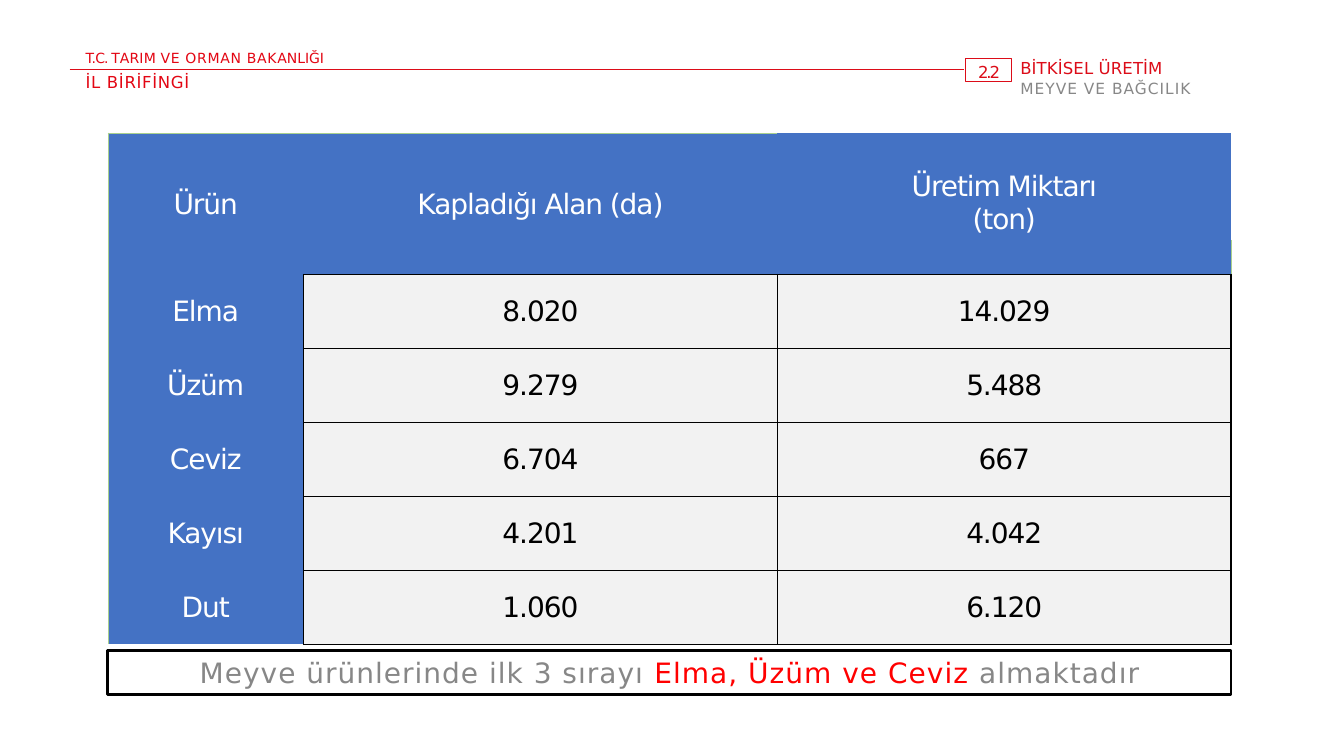
from lxml import etree
from pptx import Presentation
from pptx import util as u
from pptx.dml.color import RGBColor
from pptx.enum import shapes, text
from pptx.oxml import ns

COLORS = {
    "red": "E30613", "dark_red": "DC0C18", "accent": "FF0000",
    "grey": "878787", "blue": "4472C4", "light": "F2F2F2",
    "green": "A9D08E", "black": "000000", "white": "FFFFFF",
}
PRODUCTS = [
    ("Elma", "8.020", "14.029"),
    ("Üzüm", "9.279", "5.488"),
    ("Ceviz", "6.704", "667"),
    ("Kayısı", "4.201", "4.042"),
    ("Dut", "1.060", "6.120"),
]
COLUMN_WIDTHS = (1.94, 4.7, 4.5)
HEADER_HEIGHTS = (1.06, 0.34)
BODY_HEIGHT = 3.67 / len(PRODUCTS)
BLACK, GREEN = ("black", 1), ("green", 0.5)


def rgb(name):
    return RGBColor.from_string(COLORS[name])


class SlideBuilder:
    font = "DejaVu Sans"

    def __init__(self, presentation):
        self.slide = presentation.slides.add_slide(presentation.slide_layouts[6])

    def fill_paragraph(self, paragraph, runs, size, color, align=None):
        """Each run is (text, letter spacing) or (text, letter spacing, colour)."""
        if align is not None:
            paragraph.alignment = align
        paragraph.font.name = self.font
        paragraph.font.size = u.Pt(size)
        paragraph.font.color.rgb = rgb(color)
        for words, spacing, *run_color in runs:
            run = paragraph.add_run()
            run.text = words
            run._r.get_or_add_rPr().set("spc", str(round(spacing * 100)))
            if run_color:
                run.font.color.rgb = rgb(run_color[0])

    def text(self, left, top, width, height, lines):
        """Each line is (runs, size, colour)."""
        box = self.slide.shapes.add_textbox(*map(u.Inches, (left, top, width, height)))
        frame = box.text_frame
        frame.word_wrap = True
        frame.margin_left = frame.margin_right = frame.margin_bottom = 0
        frame.margin_top = u.Inches(0.02)
        for index, line in enumerate(lines):
            paragraph = frame.add_paragraph() if index else frame.paragraphs[0]
            if index:
                paragraph.space_before = u.Pt(0.8)
            self.fill_paragraph(paragraph, *line)

    def frame(self, left, top, width, height, color, weight):
        shape = self.slide.shapes.add_shape(
            shapes.MSO_SHAPE.RECTANGLE, *map(u.Inches, (left, top, width, height)))
        shape.shadow.inherit = False
        shape.fill.background()
        shape.line.color.rgb = rgb(color)
        shape.line.width = u.Pt(weight)
        shape.text_frame.word_wrap = True
        return shape.text_frame

    def rule(self, left, right, y, color, weight):
        line = self.slide.shapes.add_connector(
            shapes.MSO_CONNECTOR.STRAIGHT, *map(u.Inches, (left, y, right, y)))
        line.line.color.rgb = rgb(color)
        line.line.width = u.Pt(weight)
        etree.SubElement(line._element.spPr, ns.qn("a:effectLst"))

    def table(self, left, top, widths, heights):
        table = self.slide.shapes.add_table(
            len(heights), len(widths),
            *map(u.Inches, (left, top, sum(widths), sum(heights)))).table
        for column, width in zip(table.columns, widths):
            column.width = u.Inches(width)
        for row, height in zip(table.rows, heights):
            row.height = u.Inches(height)
        return table

    def cell(self, cell, lines, fill, color, borders, top=0.01):
        """borders maps L, R, T, B to (colour, points); other sides stay bare."""
        properties = cell._tc.get_or_add_tcPr()
        for side in "LRTB":
            line = etree.SubElement(properties, ns.qn("a:ln" + side))
            if side in borders:
                name, weight = borders[side]
                line.set("w", str(u.Pt(weight)))
                solid = etree.SubElement(line, ns.qn("a:solidFill"))
                etree.SubElement(solid, ns.qn("a:srgbClr")).set("val", COLORS[name])
            else:
                etree.SubElement(line, ns.qn("a:noFill"))
        cell.fill.solid()
        cell.fill.fore_color.rgb = rgb(fill)
        cell.margin_left = cell.margin_right = u.Inches(0.01)
        cell.margin_top, cell.margin_bottom = u.Inches(top), 0
        cell.vertical_anchor = text.MSO_ANCHOR.MIDDLE
        for index, words in enumerate(lines):
            frame = cell.text_frame
            paragraph = frame.add_paragraph() if index else frame.paragraphs[0]
            self.fill_paragraph(paragraph, [(words, -0.8)], 20, color,
                                text.PP_ALIGN.CENTER)


def main():
    presentation = Presentation()
    presentation.slide_width = u.Inches(13.33)
    presentation.slide_height = u.Inches(7.5)
    builder = SlideBuilder(presentation)

    # Summary below the table
    summary = builder.frame(1.07, 6.45, 11.14, 0.44, "black", 2)
    summary.vertical_anchor = text.MSO_ANCHOR.MIDDLE
    builder.fill_paragraph(summary.paragraphs[0], [
        ("Meyve ürünlerinde ilk 3 sırayı ", 0.7),
        ("Elma, Üzüm ve Ceviz ", 0.7, "accent"),
        ("almaktadır", 0.7),
    ], 20, "grey", text.PP_ALIGN.CENTER)

    # Page header
    builder.text(0.85, 0.47, 2.45, 0.18, [
        ([("T.C. T", -0.6), ("ARIM ", 0.1), ("VE ORMAN BAK", 0.5), ("ANLIĞI", 0)],
         10, "red")])
    builder.text(0.85, 0.69, 2.54, 0.21, [([("İL BİRİFİNGİ", 0.5)], 11.8, "red")])
    builder.rule(0.69, 9.56, 0.69, "dark_red", 0.82)
    builder.text(10.12, 0.56, 3.06, 0.41, [
        ([("BİTKİSEL ÜRETİM", 0.1)], 11.8, "dark_red"),
        ([("MEYVE VE BAĞCILIK", 0.7)], 11, "grey")])

    # Section number
    number = builder.frame(9.58, 0.58, 0.45, 0.23, "dark_red", 0.82)
    number.vertical_anchor = text.MSO_ANCHOR.TOP
    number.margin_left, number.margin_top = u.Inches(0.12), u.Inches(0.04)
    number.margin_right = number.margin_bottom = 0
    builder.fill_paragraph(number.paragraphs[0], [("2 . 2", -2.6)], 11.8,
                           "dark_red", text.PP_ALIGN.LEFT)

    # Table heading over two rows
    table = builder.table(1.07, 1.32, COLUMN_WIDTHS,
                          [*HEADER_HEIGHTS, *[BODY_HEIGHT] * len(PRODUCTS)])
    for column in (0, 1):
        table.cell(0, column).merge(table.cell(1, column))
    headings = [
        (0, 0, ["Ürün"], {"L": GREEN, "T": GREEN}, 0.01),
        (0, 1, ["Kapladığı Alan (da)"], {"T": GREEN, "B": BLACK}, 0.01),
        (0, 2, ["Üretim Miktarı", "(ton)"], {}, 0.33),
        (1, 2, [], {"R": GREEN, "B": BLACK}, 0),
    ]
    for row, column, lines, borders, top in headings:
        builder.cell(table.cell(row, column), lines, "blue", "white", borders, top)

    # Table body
    for row, (product, *amounts) in enumerate(PRODUCTS, len(HEADER_HEIGHTS)):
        builder.cell(table.cell(row, 0), [product], "blue", "white",
                     {"L": GREEN, "R": BLACK})
        for column, amount in enumerate(amounts, 1):
            builder.cell(table.cell(row, column), [amount], "light", "black",
                         dict.fromkeys("LRTB", BLACK))

    presentation.save("out.pptx")


if __name__ == "__main__":
    main()
